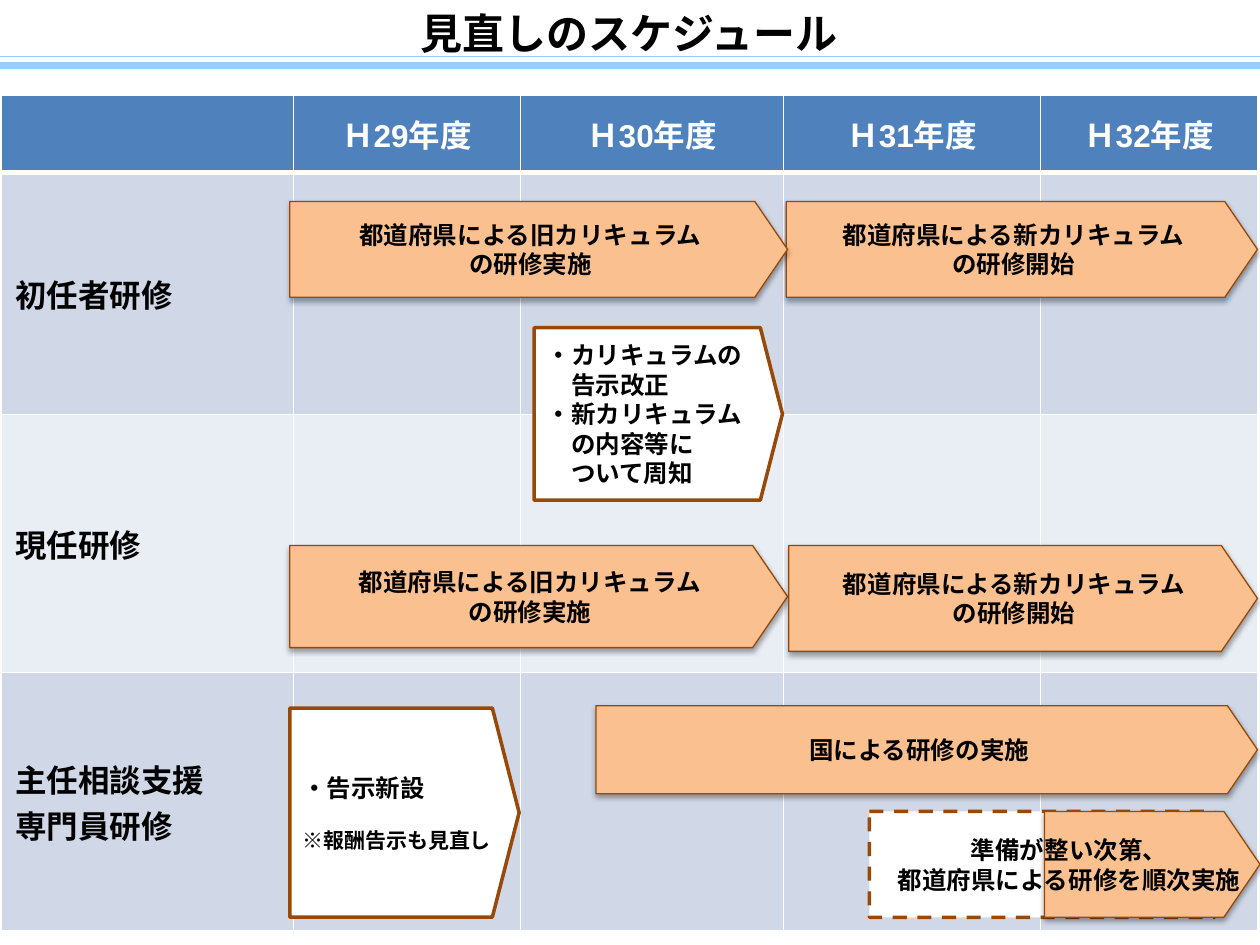
from lxml.etree import SubElement
from pptx import Presentation
from pptx.dml.color import RGBColor
from pptx.enum.dml import MSO_LINE
from pptx.enum.shapes import MSO_CONNECTOR, MSO_SHAPE
from pptx.enum.text import MSO_ANCHOR, PP_ALIGN
from pptx.oxml.ns import qn
from pptx.util import Inches, Pt

COLORS = {"white": "FFFFFF", "black": "000000", "rule": "99CCFF", "header": "4F81BD",
          "band_dark": "D0D8E8", "band_light": "E9EDF4", "bar": "FAC090", "edge": "984807"}
WIDTH, HEIGHT = Inches(10), Inches(7.5)
COLS = [23.2, 18, 20.9, 20.4, 17.2]
ROWS = [8.13, 25.6, 27.33, 27.33]
HEADERS = ["", "Ｈ29年度", "Ｈ30年度", "Ｈ31年度", "Ｈ32年度"]
TRAININGS = ["初任者研修", "現任研修", "主任相談支援\n専門員研修"]
OLD = ["都道府県による旧カリキュラム", "の研修実施"]
NEW = ["都道府県による新カリキュラム", "の研修開始"]
NATIONAL = ["国による研修の実施"]
BARS = [((47.3, 74.67, 52.5, 9.33), NATIONAL),
        ((62.4, 21.33, 37.4, 10.13), NEW),
        ((23, 57.73, 39.5, 10.8), OLD),
        ((23, 21.33, 39.5, 10.13), OLD),
        ((62.6, 57.73, 37.2, 11.2), NEW),
        ((82.9, 85.87, 17.1, 11.2), [])]
NOTICE = [("・告示新設", {}), ("※報酬告示も見直し", {"size": 12, "before": 14.6})]
REVISION = [("・カリキュラムの", {}), ("告示改正", {"indent": 14}), ("・新カリキュラム", {}),
            ("の内容等に", {"indent": 14}), ("ついて周知", {"indent": 14})]


def rgb(name):
    """Return the named colour."""
    return RGBColor.from_string(COLORS[name])


def share(x, y, w, h):
    """Turn percentages of the slide into lengths."""
    return [int(v * full / 100) for v, full in zip((x, y, w, h), (WIDTH, HEIGHT) * 2)]


def set_format(obj, **values):
    """Set attributes from format values."""
    for name, value in values.items():
        setattr(obj, name, value)


def add_run(p, text, size, color, font, east_asian=False):
    """Add one bold run to a paragraph."""
    r = p.add_run()
    r.text = text
    set_format(r.font, name=font, size=Pt(size), bold=True)
    r.font.color.rgb = rgb(color)
    if east_asian:
        SubElement(r.font._element, qn("a:ea"), typeface=font)


def fill_text(sp, lines, align, size=14, anchor=MSO_ANCHOR.MIDDLE):
    """Write lines, each a string or a string with its format, into a shape."""
    tf = sp.text_frame
    set_format(tf, word_wrap=True, vertical_anchor=anchor)
    for i, line in enumerate(lines):
        text, fmt = (line, {}) if isinstance(line, str) else line
        p = tf.add_paragraph() if i else tf.paragraphs[0]
        set_format(p, alignment=align, space_before=Pt(fmt.get("before", 0)))
        if "indent" in fmt:
            p._p.get_or_add_pPr().set("marL", str(Pt(fmt["indent"])))
        add_run(p, text, fmt.get("size", size), "black", "Calibri", True)


def add_box(s, kind, place, fill, line, width):
    """Add a filled and outlined shape without a shadow."""
    sp = s.shapes.add_shape(kind, *share(*place))
    sp.shadow.inherit = False
    sp.fill.solid()
    sp.fill.fore_color.rgb = rgb(fill)
    sp.line.color.rgb = rgb(line)
    sp.line.width = Pt(width)
    return sp


def add_bar(s, place, lines):
    """Add an orange period arrow with a soft shadow."""
    sp = add_box(s, MSO_SHAPE.PENTAGON, place, "bar", "edge", 0.75)
    sp.adjustments[0] = 0.341
    effects = sp._element.spPr.find(qn("a:effectLst"))
    shadow = SubElement(effects, qn("a:outerShdw"), blurRad=str(Pt(3.1)), dist=str(Pt(1.8)),
                        dir="5400000", algn="t", rotWithShape="0")
    color = SubElement(shadow, qn("a:srgbClr"), val=COLORS["black"])
    SubElement(color, qn("a:alpha"), val="35000")
    fill_text(sp, lines, PP_ALIGN.CENTER)


def add_note(s, place, lines, point=0.128):
    """Add a white outlined arrow with left-aligned notes."""
    sp = add_box(s, MSO_SHAPE.PENTAGON, place, "white", "edge", 2)
    sp.adjustments[0] = point
    sp.text_frame.margin_right = 0
    fill_text(sp, lines, PP_ALIGN.LEFT)
    return sp


def add_rule(s, y, width):
    """Add a rule across the slide."""
    _, top, right, _ = share(0, y, 100, 0)
    line = s.shapes.add_connector(MSO_CONNECTOR.STRAIGHT, 0, top, right, top)
    line.line.color.rgb = rgb("rule")
    line.line.width = Pt(width)
    SubElement(line._element.spPr, qn("a:effectLst"))


def add_title(s, text):
    """Add the title with its two rules."""
    sp = add_box(s, MSO_SHAPE.RECTANGLE, (0.1, 0, 99.7, 6.93), "white", "white", 2)
    fill_text(sp, [text], PP_ALIGN.CENTER, 24)
    add_rule(s, 6, 0.75)
    add_rule(s, 6.93, 4.5)


def style_cell(cell, fill, bottom):
    """Give a cell white borders and a fill."""
    tcPr = cell._tc.get_or_add_tcPr()
    for side, width in zip("LRTB", (1, 1, 1, bottom)):
        ln = SubElement(tcPr, qn(f"a:ln{side}"), w=str(Pt(width)))
        SubElement(SubElement(ln, qn("a:solidFill")), qn("a:srgbClr"), val=COLORS["white"])
    cell.fill.solid()
    cell.fill.fore_color.rgb = rgb(fill)
    set_format(cell, vertical_anchor=MSO_ANCHOR.MIDDLE, margin_left=Inches(0.11),
               margin_right=Inches(0.11))


def add_schedule(s):
    """Add the table of trainings by fiscal year."""
    place = share(0.1, 10.13, sum(COLS), sum(ROWS))
    table = s.shapes.add_table(len(ROWS), len(COLS), *place).table
    for col, w in zip(table.columns, COLS):
        col.width = int(WIDTH * w / 100)
    for row, h in zip(table.rows, ROWS):
        row.height = int(HEIGHT * h / 100)
    rows = [HEADERS] + [[name] + [""] * (len(COLS) - 1) for name in TRAININGS]
    for i, texts in enumerate(rows):
        fill = "header" if i == 0 else ("band_light", "band_dark")[i % 2]
        for j, text in enumerate(texts):
            cell = table.cell(i, j)
            style_cell(cell, fill, 1 if i else 3)
            for k, line in enumerate(text.split("\n") if text else []):
                tf = cell.text_frame
                p = tf.add_paragraph() if k else tf.paragraphs[0]
                p.alignment = PP_ALIGN.LEFT if i else PP_ALIGN.CENTER
                add_run(p, line, 18, "black" if i else "white", "Arial")


def main():
    """Build the schedule slide."""
    prs = Presentation()
    set_format(prs, slide_width=WIDTH, slide_height=HEIGHT)
    s = prs.slides.add_slide(prs.slide_layouts[6])
    add_title(s, "見直しのスケジュール")
    add_schedule(s)
    planned = add_note(s, (69, 85.87, 30.8, 11.2), [], 0.409)
    planned.line.dash_style = MSO_LINE.DASH
    add_note(s, (23, 74.93, 18.2, 22.13), NOTICE)
    add_note(s, (42.4, 34.67, 19.7, 18.27), REVISION)
    for place, lines in BARS:
        add_bar(s, place, lines)
    tb = s.shapes.add_textbox(*share(69.8, 87.73, 30.1, 7.6))
    fill_text(tb, ["準備が整い次第、", "都道府県による研修を順次実施"], PP_ALIGN.CENTER,
              anchor=MSO_ANCHOR.TOP)
    prs.save("out.pptx")


if __name__ == "__main__":
    main()
